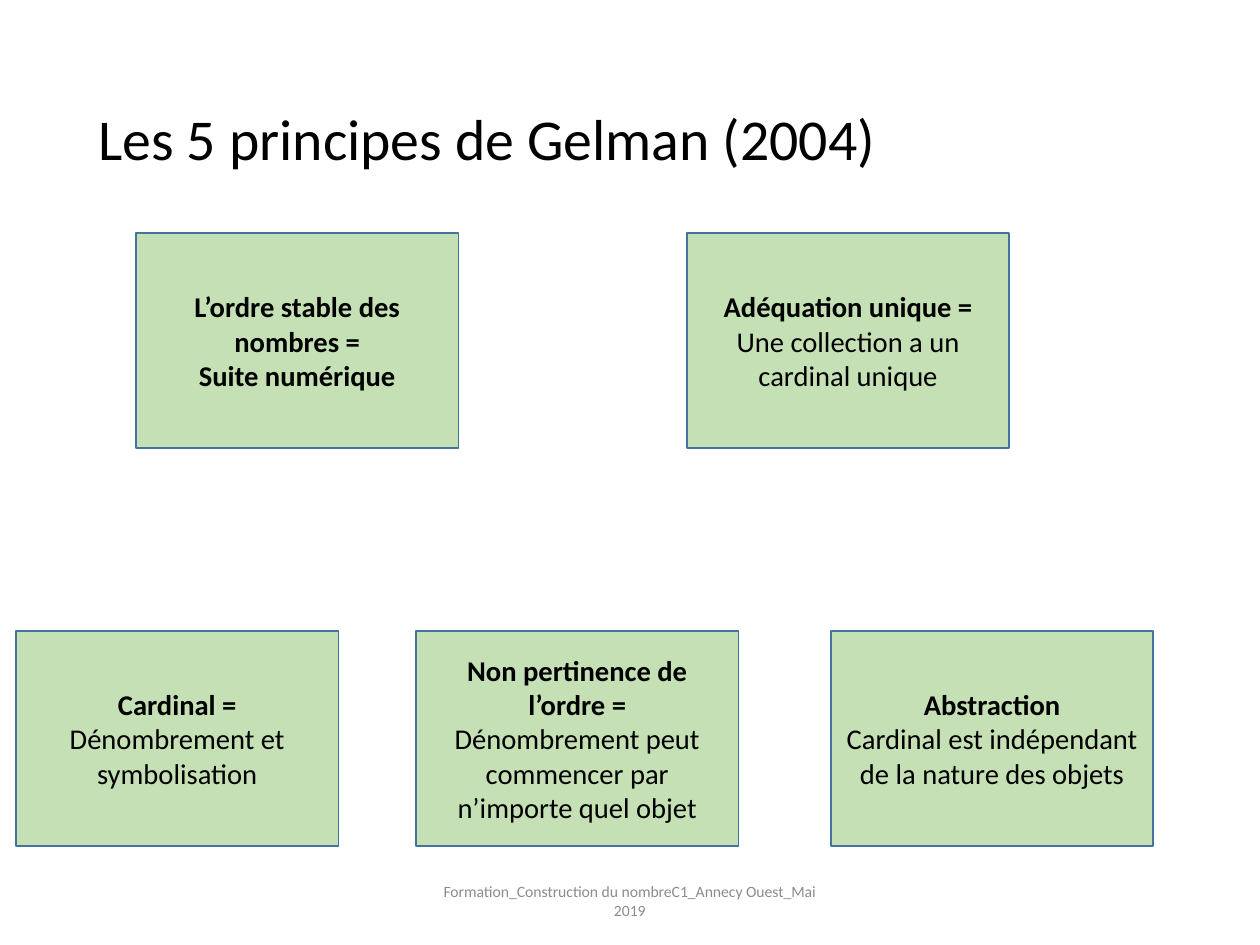
from pptx import Presentation
from pptx.dml.color import RGBColor
from pptx.enum.shapes import MSO_SHAPE
from pptx.enum.text import MSO_ANCHOR, PP_ALIGN
from pptx.util import Cm, Inches, Pt

BLACK = RGBColor(0x00, 0x00, 0x00)
GREY = RGBColor(0x8C, 0x8C, 0x8C)
GREEN = RGBColor(0xC5, 0xE0, 0xB4)
BLUE = RGBColor(0x43, 0x73, 0x9E)

CARD_WIDTH, CARD_HEIGHT = 2.82, 1.88
TOP_ROW, BOTTOM_ROW = 2.04, 5.52

# left, top, heading, explanation, explanation in bold
PRINCIPLES = [
    (1.19, TOP_ROW, "L’ordre stable des nombres =", "Suite numérique", True),
    (0.14, BOTTOM_ROW, "Cardinal =", "Dénombrement et symbolisation", False),
    (3.64, BOTTOM_ROW, "Non pertinence de l’ordre =",
     "Dénombrement peut commencer par n’importe quel objet", False),
    (7.27, BOTTOM_ROW, "Abstraction",
     "Cardinal est indépendant de la nature des objets", False),
    (6.01, TOP_ROW, "Adéquation unique =", "Une collection a un cardinal unique", False),
]


def write(para, text, size=18, color=BLACK, bold=False, align=PP_ALIGN.CENTER, spacing=None):
    para.alignment = align
    para.line_spacing = spacing
    span = para.add_run()
    span.text = text
    span.font.name = "Calibri"
    span.font.size = Pt(size)
    span.font.bold = bold
    span.font.color.rgb = color


class PrinciplesPage:
    def __init__(self, deck):
        self.page = deck.slides.add_slide(deck.slide_layouts[6])

    def prepare(self, box):
        """Wrap the text of a box, centre it vertically and return its frame."""
        frame = box.text_frame
        frame.word_wrap = True
        frame.vertical_anchor = MSO_ANCHOR.MIDDLE
        return frame

    def label(self, left, top, width, height, text, **style):
        box = self.page.shapes.add_textbox(
            Inches(left), Inches(top), Inches(width), Inches(height))
        write(self.prepare(box).paragraphs[0], text, **style)

    def card(self, left, top, heading, explanation, explanation_bold):
        box = self.page.shapes.add_shape(
            MSO_SHAPE.RECTANGLE, Inches(left), Inches(top),
            Inches(CARD_WIDTH), Inches(CARD_HEIGHT))
        box.shadow.inherit = False
        box.fill.solid()
        box.fill.fore_color.rgb = GREEN
        box.line.color.rgb = BLUE
        box.line.width = Pt(1)
        frame = self.prepare(box)
        write(frame.paragraphs[0], heading, bold=True)
        write(frame.add_paragraph(), explanation, bold=explanation_bold)


def main():
    deck = Presentation()
    deck.slide_width = Cm(28)
    deck.slide_height = Cm(21)
    page = PrinciplesPage(deck)
    page.label(0.76, 0.44, 9.51, 1.6, "Les 5 principes de Gelman (2004)",
               size=36.4, align=PP_ALIGN.LEFT, spacing=0.9)
    for principle in PRINCIPLES:
        page.card(*principle)
    page.label(3.65, 7.66, 3.72, 0.44,
               "Formation_Construction du nombreC1_Annecy Ouest_Mai 2019",
               size=9.9, color=GREY)
    deck.save("out.pptx")


if __name__ == "__main__":
    main()
